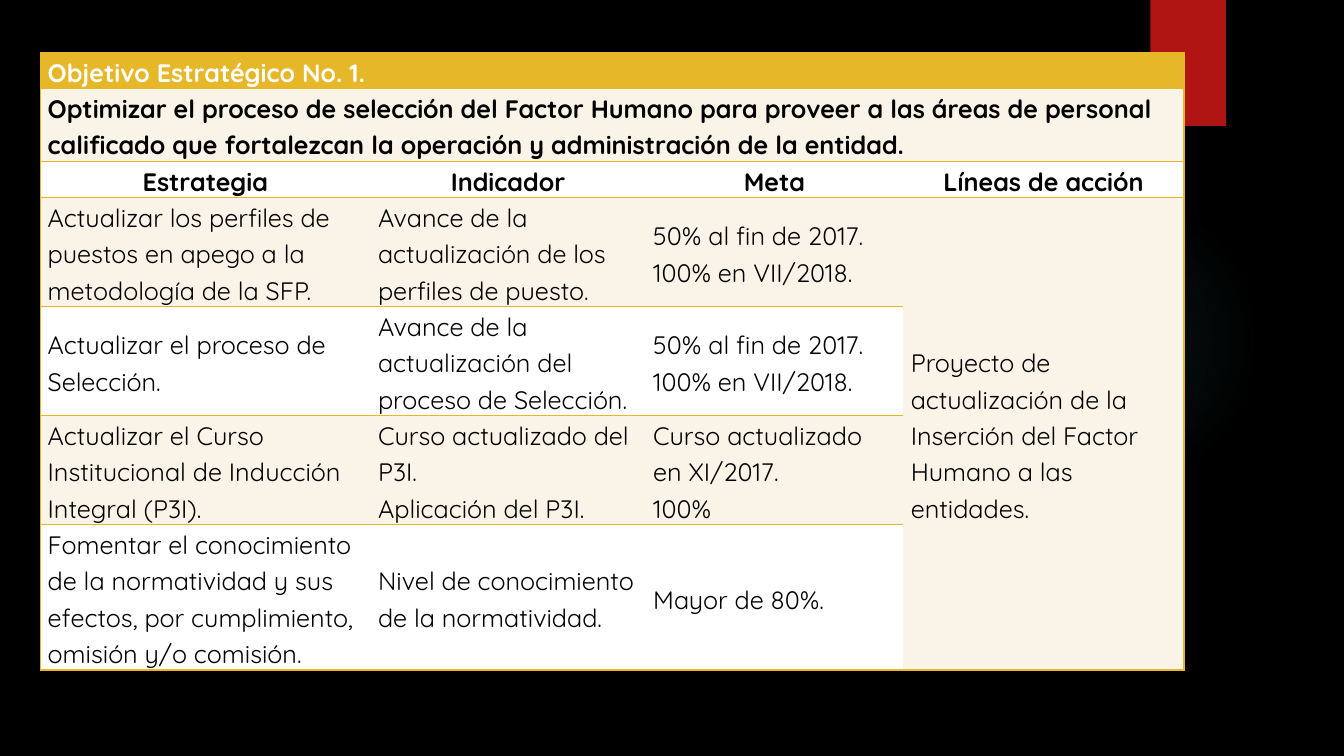
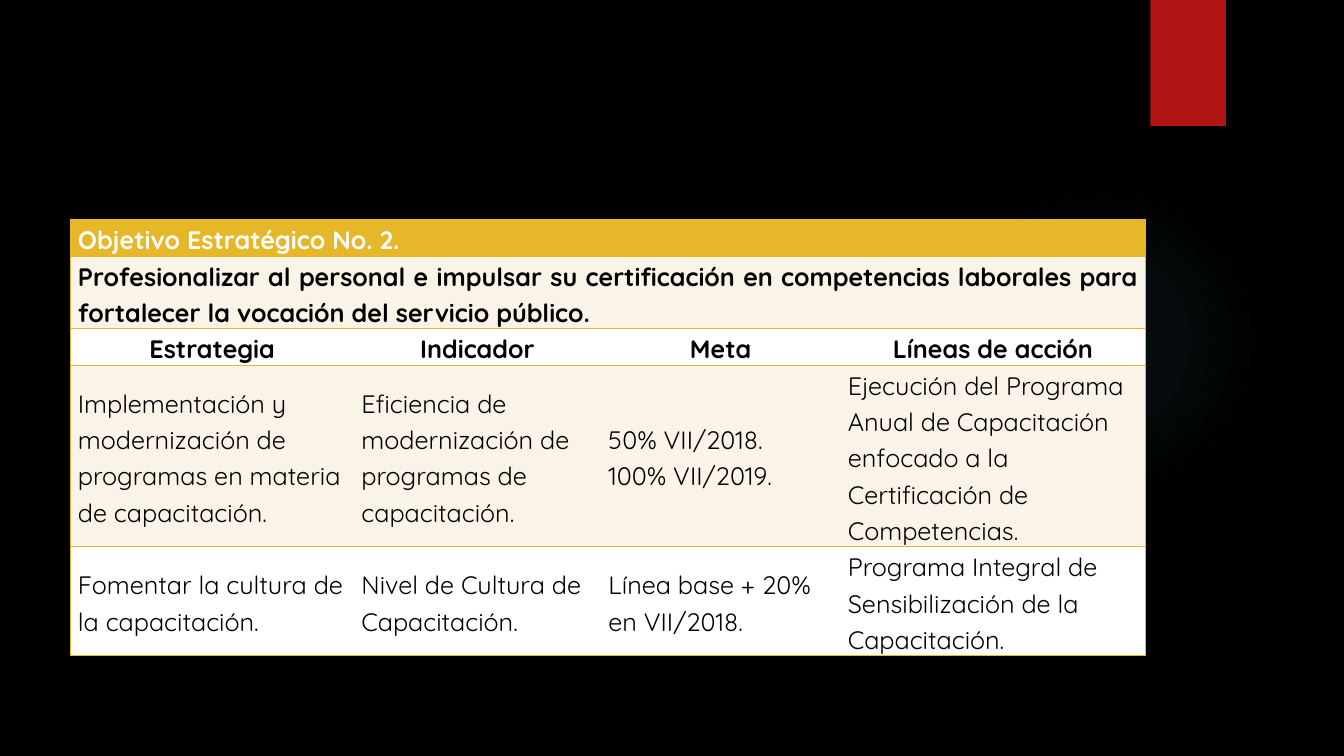
from dataclasses import dataclass
from typing import Optional

from lxml.etree import SubElement
from pptx import Presentation
from pptx.dml.color import RGBColor
from pptx.enum.shapes import MSO_SHAPE
from pptx.enum.text import MSO_ANCHOR, PP_ALIGN
from pptx.oxml import parse_xml
from pptx.oxml.ns import nsdecls, qn
from pptx.util import Pt

BLACK = RGBColor(0x00, 0x00, 0x00)
WHITE = RGBColor(0xFF, 0xFF, 0xFF)
GOLD = RGBColor(0xE6, 0xB7, 0x29)
CREAM = RGBColor(0xFA, 0xF3, 0xE8)
RED = RGBColor(0xB0, 0x15, 0x13)
TEAL = RGBColor(0x50, 0xB9, 0xC1)

LINE_HEIGHT = 25.9
HEADINGS = ("Estrategia", "Indicador", "Meta", "Líneas de acción")
COLUMN_COUNT = len(HEADINGS)
HEADING_ROW = 2
CELL_FORMAT = {
    "margin_left": Pt(5.4),
    "margin_right": Pt(5.4),
    "margin_top": Pt(0),
    "margin_bottom": Pt(0),
    "vertical_anchor": MSO_ANCHOR.MIDDLE,
}
GLOW_STOPS = ((0, 7), (36, 6), (69, 0))  # position and opacity, in percent


@dataclass(frozen=True)
class ActionRow:
    line_count: int
    texts: tuple[Optional[str], ...]  # None continues the cell above


@dataclass(frozen=True)
class Objective:
    number: int
    statement: str
    statement_alignment: PP_ALIGN
    left: float
    top: float
    column_widths: tuple[float, ...]
    actions: tuple[ActionRow, ...]


OBJECTIVES = (
    Objective(
        1,
        "Optimizar el proceso de selección del Factor Humano para proveer a las áreas "
        "de personal calificado que fortalezcan la operación y administración de la entidad.",
        PP_ALIGN.LEFT, 28.7, 37.4, (236, 196.5, 184, 200.5),
        (
            ActionRow(3, (
                "Actualizar los perfiles de puestos en apego a la metodología de la SFP.",
                "Avance de la actualización de los perfiles de puesto.",
                "50% al fin de 2017.\n100% en VII/2018.",
                "Proyecto de actualización de la Inserción del Factor Humano a las entidades.",
            )),
            ActionRow(3, (
                "Actualizar el proceso de Selección.",
                "Avance de la actualización del proceso de Selección.",
                "50% al fin de 2017.\n100% en VII/2018.",
                None,
            )),
            ActionRow(3, (
                "Actualizar el Curso Institucional de Inducción Integral (P3I).",
                "Curso actualizado del P3I.\nAplicación del P3I.",
                "Curso actualizado en XI/2017.\n100%",
                None,
            )),
            ActionRow(4, (
                "Fomentar el conocimiento de la normatividad y sus efectos, "
                "por cumplimiento, omisión y/o comisión.",
                "Nivel de conocimiento de la normatividad.",
                "Mayor de 80%.",
                None,
            )),
        ),
    ),
    Objective(
        2,
        "Profesionalizar al personal e impulsar su certificación en competencias "
        "laborales para fortalecer la vocación del servicio público.",
        PP_ALIGN.JUSTIFY, 50.3, 157, (202.5, 176.5, 171, 218),
        (
            ActionRow(5, (
                "Implementación y modernización de programas en materia de capacitación.",
                "Eficiencia de modernización de programas de capacitación.",
                "50% VII/2018.\n100% VII/2019.",
                "Ejecución del Programa Anual de Capacitación enfocado a la "
                "Certificación de Competencias.",
            )),
            ActionRow(3, (
                "Fomentar la cultura de la capacitación.",
                "Nivel de Cultura de Capacitación.",
                "Línea base + 20% en VII/2018.",
                "Programa Integral de Sensibilización de la Capacitación.",
            )),
        ),
    ),
)


def apply_format(target: object, values: dict) -> None:
    for name, value in values.items():
        setattr(target, name, value)


def add_plain_shape(slide, kind: MSO_SHAPE, left: float, top: float, width: float, height: float):
    shape = slide.shapes.add_shape(kind, Pt(left), Pt(top), Pt(width), Pt(height))
    shape.shadow.inherit = False
    shape.line.fill.background()
    return shape


def add_backdrop(slide) -> None:
    glow = add_plain_shape(slide, MSO_SHAPE.OVAL, 677.5, 131.8, 221.8, 221.8)
    stops = "".join(
        f'<a:gs pos="{position * 1000}"><a:srgbClr val="{TEAL}">'
        f'<a:alpha val="{opacity * 1000}"/></a:srgbClr></a:gs>'
        for position, opacity in GLOW_STOPS
    )
    gradient = parse_xml(
        f'<a:gradFill {nsdecls("a")}><a:gsLst>{stops}</a:gsLst><a:path path="circle">'
        '<a:fillToRect l="50000" t="50000" r="50000" b="50000"/></a:path></a:gradFill>'
    )
    glow.element.spPr.find(qn("a:prstGeom")).addnext(gradient)

    ribbon = add_plain_shape(slide, MSO_SHAPE.RECTANGLE, 821.7, 0, 54, 90)
    ribbon.fill.solid()
    ribbon.fill.fore_color.rgb = RED


def set_borders(cell, edges: dict[str, bool]) -> None:
    """Draw the edges that are true in gold and clear the others."""
    properties = cell._tc.get_or_add_tcPr()
    for edge, visible in edges.items():
        line = SubElement(properties, qn(f"a:ln{edge}"), w=str(Pt(1)))
        if visible:
            fill = SubElement(line, qn("a:solidFill"))
            SubElement(fill, qn("a:srgbClr"), val=str(GOLD))
        else:
            SubElement(line, qn("a:noFill"))


def write_cell(cell, text: str, alignment: PP_ALIGN, bold: bool, color: RGBColor) -> None:
    cell.text = text
    for paragraph in cell.text_frame.paragraphs:
        apply_format(paragraph, {"alignment": alignment, "line_spacing": 1.15})
        apply_format(paragraph.font, {"name": "Quicksand", "size": Pt(18), "bold": bold})
        paragraph.font.color.rgb = color


def add_objective_table(slide, objective: Objective) -> None:
    blanks = (None,) * (COLUMN_COUNT - 1)
    texts = [
        (f"Objetivo Estratégico No. {objective.number}.", *blanks),
        (objective.statement, *blanks),
        HEADINGS,
        *(action.texts for action in objective.actions),
    ]
    line_counts = [1, 2, 1, *(action.line_count for action in objective.actions)]
    frame = slide.shapes.add_table(
        len(texts), COLUMN_COUNT, Pt(objective.left), Pt(objective.top),
        Pt(sum(objective.column_widths)), Pt(sum(line_counts) * LINE_HEIGHT),
    )
    table = frame.table
    apply_format(table, {"first_row": False, "horz_banding": False})
    for column, width in zip(table.columns, objective.column_widths):
        column.width = Pt(width)
    for row, line_count in zip(table.rows, line_counts):
        row.height = Pt(line_count * LINE_HEIGHT)

    last_row, last_column = len(texts) - 1, COLUMN_COUNT - 1
    for row in range(HEADING_ROW):
        table.cell(row, 0).merge(table.cell(row, last_column))
    if texts[last_row][last_column] is None:
        table.cell(HEADING_ROW + 1, last_column).merge(table.cell(last_row, last_column))

    for row, row_texts in enumerate(texts):
        row_fill = GOLD if row == 0 else CREAM if row % 2 else WHITE
        alignment = {1: objective.statement_alignment, HEADING_ROW: PP_ALIGN.CENTER}.get(row, PP_ALIGN.LEFT)
        for column, text in enumerate(row_texts):
            cell = table.cell(row, column)
            continues_above = text is None and row > HEADING_ROW
            set_borders(cell, {
                "L": column == 0,
                "R": column == last_column or (cell.is_merge_origin and cell.span_width > 1),
                "T": not continues_above,
                "B": not continues_above or row == last_row,
            })
            apply_format(cell, CELL_FORMAT)
            cell.fill.solid()
            cell.fill.fore_color.rgb = CREAM if continues_above else row_fill
            if text is not None:
                write_cell(cell, text, alignment, row <= HEADING_ROW, WHITE if row == 0 else BLACK)


def main() -> None:
    presentation = Presentation()
    apply_format(presentation, {"slide_width": Pt(960), "slide_height": Pt(540)})
    background = presentation.slide_master.background.fill
    background.solid()
    background.fore_color.rgb = BLACK
    blank_layout = presentation.slide_layouts[6]
    for objective in OBJECTIVES:
        slide = presentation.slides.add_slide(blank_layout)
        add_backdrop(slide)
        add_objective_table(slide, objective)
    presentation.save("out.pptx")


if __name__ == "__main__":
    main()
